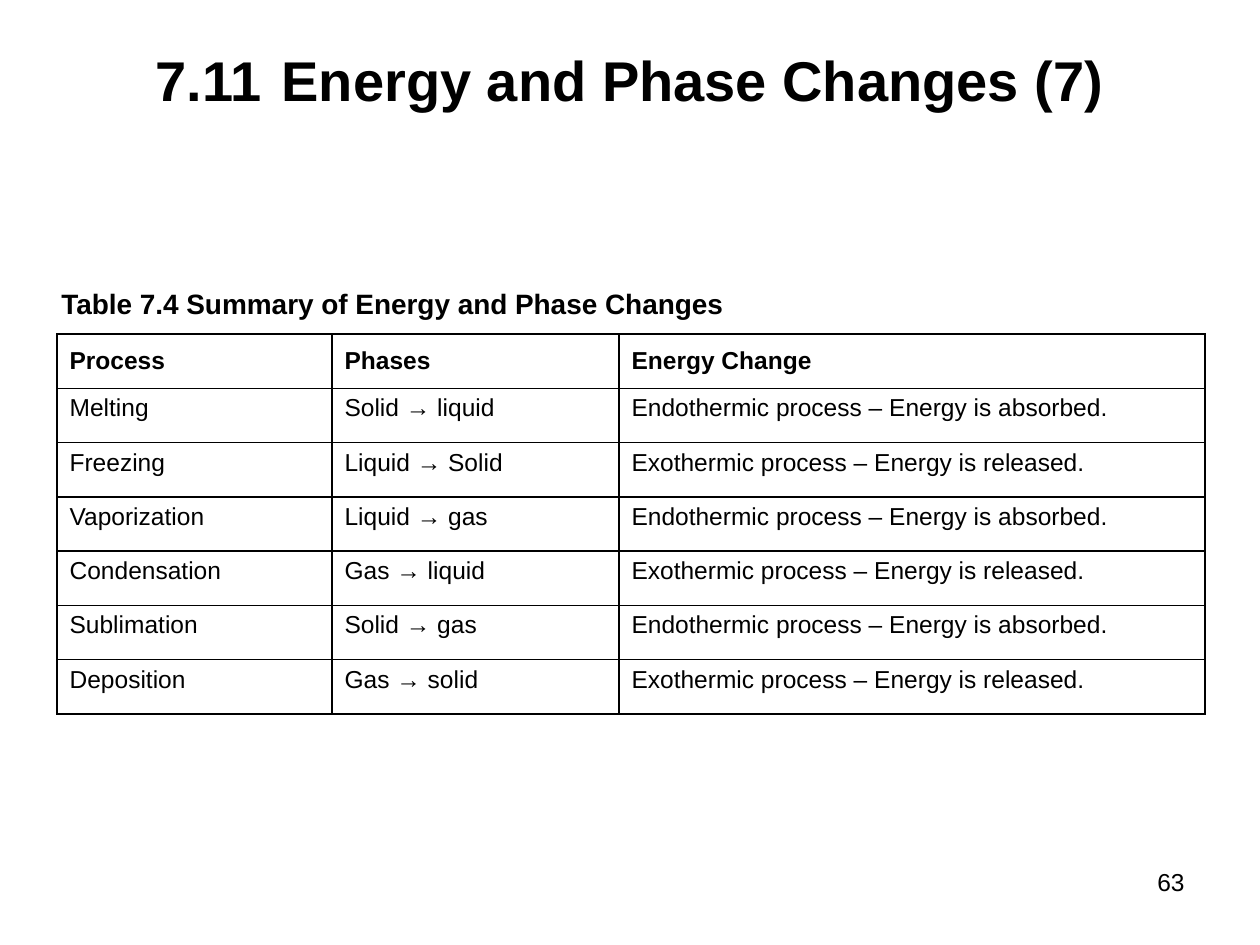
from pptx import Presentation
from pptx import util as u
from pptx.dml.color import RGBColor
from pptx.enum import text
from pptx.oxml import parse_xml
from pptx.oxml.ns import nsdecls

TITLE = "7.11\tEnergy and Phase Changes (7)"
CAPTION = "Table 7.4 Summary of Energy and Phase Changes"
PAGE = "63"
HEADINGS = ("Process", "Phases", "Energy Change")
ABSORBED = "Endothermic process – Energy is absorbed."
RELEASED = "Exothermic process – Energy is released."
CHANGES = [
    ("Melting", "Solid → liquid", ABSORBED),
    ("Freezing", "Liquid → Solid", RELEASED),
    ("Vaporization", "Liquid → gas", ABSORBED),
    ("Condensation", "Gas → liquid", RELEASED),
    ("Sublimation", "Solid → gas", ABSORBED),
    ("Deposition", "Gas → solid", RELEASED),
]

BLACK = RGBColor(0, 0, 0)
FONT = "Arial"
PX = u.Inches(1) / 126
COLUMNS = (275, 287, 586)
TABLE_LEFT, TABLE_TOP, TABLE_HEIGHT = 57, 334, 380
LEFT, CENTER, RIGHT = (text.PP_ALIGN.LEFT, text.PP_ALIGN.CENTER,
                       text.PP_ALIGN.RIGHT)
TOP, MIDDLE = text.MSO_ANCHOR.TOP, text.MSO_ANCHOR.MIDDLE


def px(*lengths):
    return [u.Emu(round(length * PX)) for length in lengths]


def write(frame, words, size, bold=False, align=LEFT):
    frame.text = words
    paragraph = frame.paragraphs[0]
    paragraph.alignment = align
    font = paragraph.runs[0].font
    for key, value in {"name": FONT, "size": u.Pt(size), "bold": bold}.items():
        setattr(font, key, value)
    font.color.rgb = BLACK


def add_label(slide, box, words, size, bold=False, align=LEFT):
    frame = slide.shapes.add_textbox(*px(*box)).text_frame
    frame.word_wrap = True
    write(frame, words, size, bold, align)
    return frame


def add_borders(cell):
    properties = cell._tc.get_or_add_tcPr()
    for index, side in enumerate(("lnL", "lnR", "lnT", "lnB")):
        properties.insert(index, parse_xml(
            f'<a:{side} {nsdecls("a")} w="{u.Pt(1)}"><a:solidFill>'
            f'<a:srgbClr val="{BLACK}"/></a:solidFill></a:{side}>'))


def add_summary(slide):
    rows = [HEADINGS] + CHANGES
    box = px(TABLE_LEFT, TABLE_TOP, sum(COLUMNS), TABLE_HEIGHT)
    summary = slide.shapes.add_table(len(rows), len(COLUMNS), *box).table
    summary.first_row = summary.horz_banding = False
    for column, width in zip(summary.columns, px(*COLUMNS)):
        column.width = width
    for r, row in enumerate(rows):
        for c, words in enumerate(row):
            cell = summary.cell(r, c)
            cell.fill.background()
            cell.vertical_anchor = TOP if r else MIDDLE
            write(cell.text_frame, words, 14, bold=r == 0)
            add_borders(cell)


def main():
    deck = Presentation()
    deck.slide_width, deck.slide_height = px(1260, 945)
    slide = deck.slides.add_slide(deck.slide_layouts[5])

    title = slide.shapes.title
    title.left, title.top, title.width, title.height = px(63, 35, 1134, 88)
    title.text_frame.vertical_anchor = MIDDLE
    title.text_frame.auto_size = text.MSO_AUTO_SIZE.NONE
    write(title.text_frame, TITLE, 32, True, CENTER)

    caption = add_label(slide, (49, 280, 731, 54), CAPTION, 16, True)
    caption.paragraphs[0].space_before = u.Pt(3)
    add_summary(slide)
    add_label(slide, (1052, 861, 145, 43), PAGE, 14, align=RIGHT)
    deck.save("out.pptx")


if __name__ == "__main__":
    main()
